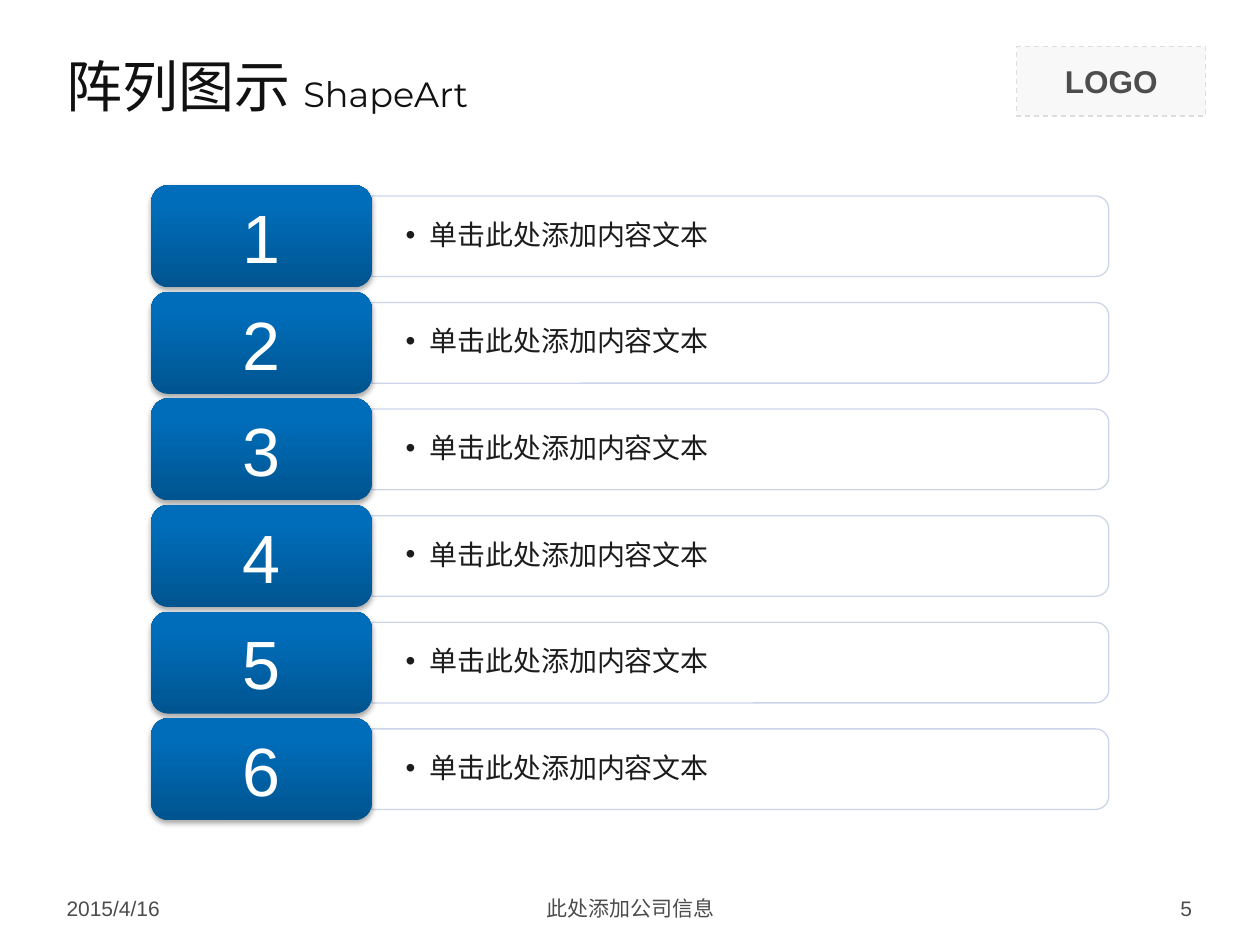
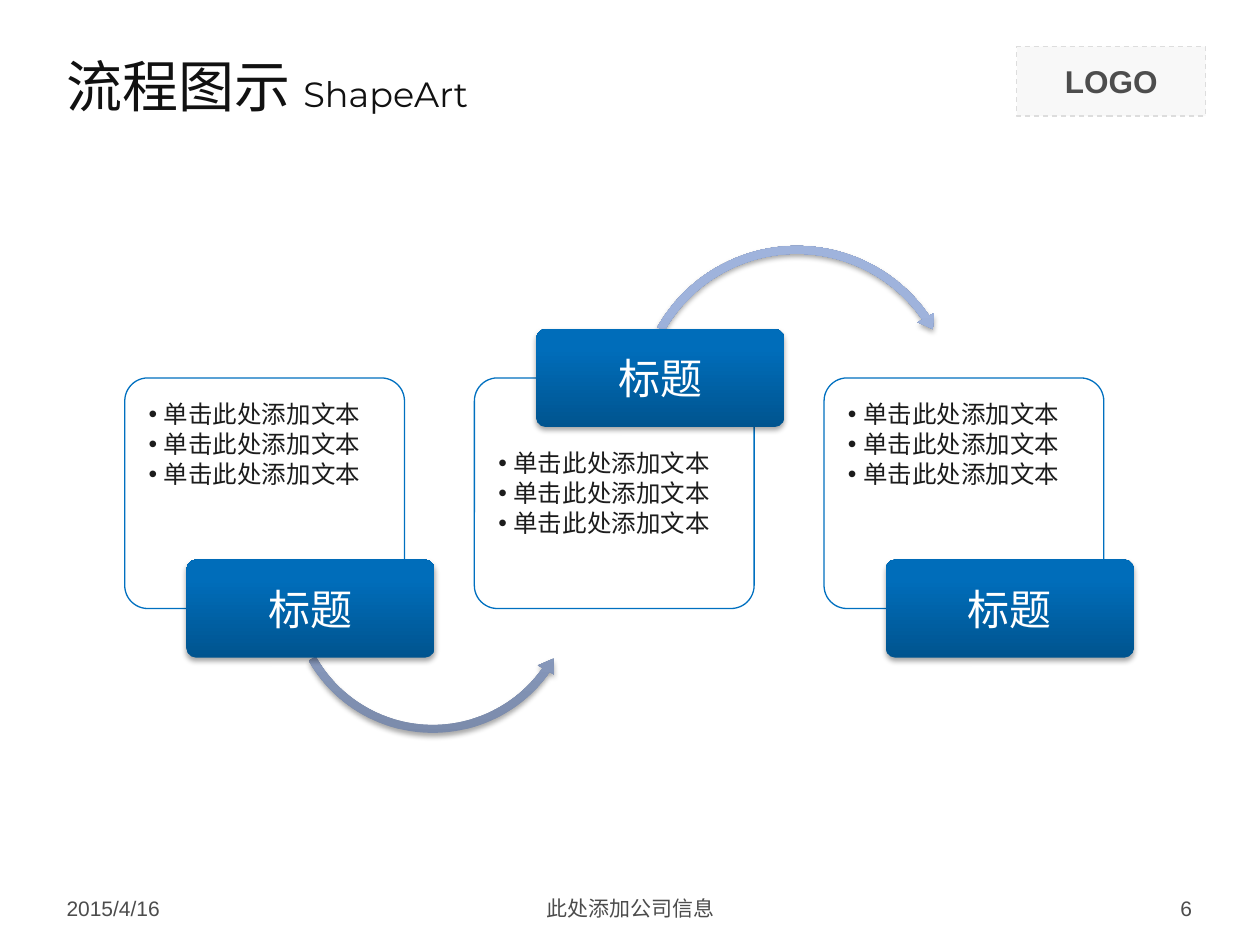
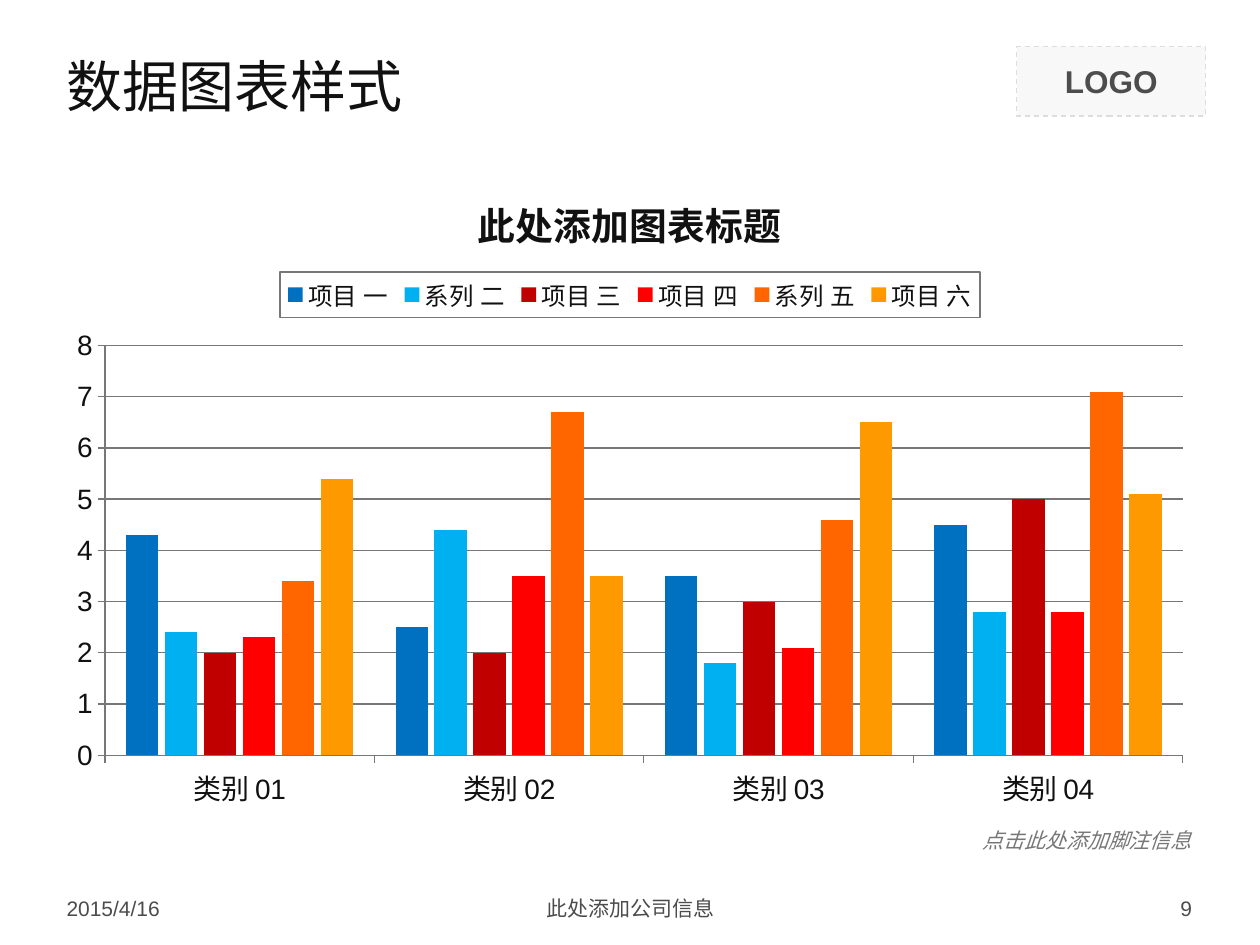
from lxml.etree import SubElement
from pptx import Presentation
from pptx.chart.data import CategoryChartData
from pptx.dml.color import RGBColor
from pptx.enum.chart import XL_CHART_TYPE, XL_LEGEND_POSITION, XL_TICK_MARK
from pptx.enum.dml import MSO_LINE
from pptx.enum.shapes import MSO_SHAPE
from pptx.enum.text import MSO_ANCHOR, MSO_AUTO_SIZE, PP_ALIGN
from pptx.oxml import parse_xml
from pptx.oxml.ns import nsdecls, qn
from pptx.util import Inches, Pt

BODY_FONT, TITLE_FONT = "Arial", "Montserrat"
INK, BODY_INK, FOOTER_INK, GREY = "111111", "1C1C1C", "4C4C4C", "777777"
WHITE, BLUE, PALE_LINE = "FFFFFF", "0070C0", "CCD5E8"
BLUE_GRADIENT = ("00548F", "006DBA")
ARROW_GRADIENT = ("7A8AAA", "9FB3DC")
MARGIN, CONTENT_WIDTH = 0.43, 9.14


def color(value):
    return RGBColor.from_string(value)


def style_font(font, size, ink, name=BODY_FONT, bold=False, italic=False):
    font.size, font.name = Pt(size), name
    font.bold, font.italic = bold, italic
    font.color.rgb = color(ink)


def add_text(page, box, text, size, ink, align=PP_ALIGN.LEFT,
             anchor=MSO_ANCHOR.MIDDLE, **font_style):
    label = page.shapes.add_textbox(*map(Inches, box))
    write(label.text_frame, text, size, ink, align, anchor, **font_style)
    return label


def write(frame, text, size, ink, align=PP_ALIGN.CENTER,
          anchor=MSO_ANCHOR.MIDDLE, **font_style):
    frame.text = text
    frame.word_wrap = True
    frame.vertical_anchor = anchor
    for para in frame.paragraphs:
        para.alignment = align
        for span in para.runs:
            style_font(span.font, size, ink, **font_style)


def add_bullets(page, box, text, size, indent, inset, anchor):
    """Bulleted lines with a hanging indent; inset is (horizontal, vertical)."""
    label = add_text(page, box, text, size, BODY_INK, anchor=anchor)
    frame = label.text_frame
    frame.margin_left = frame.margin_right = Inches(inset[0])
    frame.margin_top = frame.margin_bottom = Inches(inset[1])
    for para in frame.paragraphs:
        para.level = 1
        para.line_spacing = 0.9
        para.space_after = Pt(size * 0.15)
        properties = para._p.get_or_add_pPr()
        properties.set("marL", str(Inches(indent)))
        properties.set("indent", str(-Inches(indent)))
        SubElement(properties, qn("a:buFont")).set("typeface", BODY_FONT)
        SubElement(properties, qn("a:buChar")).set("char", "•")


def add_panel(page, kind, box, fill, line):
    panel = page.shapes.add_shape(kind, *map(Inches, box))
    panel.shadow.inherit = False
    panel.fill.solid()
    panel.fill.fore_color.rgb = color(fill)
    panel.line.color.rgb = color(line)
    panel.line.width = Pt(0.75)
    return panel


def add_glossy(page, kind, box, gradient):
    """Shape without outline, with a vertical gradient and a soft shadow."""
    shape = page.shapes.add_shape(kind, *map(Inches, box))
    shape.fill.gradient()
    shape.fill.gradient_angle = 90
    for stop, position, shade in zip(shape.fill.gradient_stops, (0, 0.8), gradient):
        stop.position = position
        stop.color.rgb = color(shade)
    shape.line.fill.background()
    shape.shadow.inherit = False
    shape._element.spPr.find(qn("a:effectLst")).append(parse_xml(
        f'<a:outerShdw {nsdecls("a")} blurRad="40000" dist="23000" dir="5400000"'
        ' rotWithShape="0"><a:srgbClr val="000000"><a:alpha val="35000"/>'
        '</a:srgbClr></a:outerShdw>'))
    return shape


def add_curved_arrow(page, kind, box, thickness, head, head_angle, end, start):
    """Thickness and head are percentages of the box; the rest are degrees."""
    arrow = add_glossy(page, kind, box, ARROW_GRADIENT)
    angles = [degrees * 0.6 for degrees in (head_angle, end, start)]
    for index, value in enumerate([thickness / 100, *angles, head / 100]):
        arrow.adjustments[index] = value


def add_page(deck, title, number, subtitle=""):
    page = deck.slides.add_slide(deck.slide_layouts[6])
    logo = add_panel(page, MSO_SHAPE.RECTANGLE, (8.07, 0.37, 1.5, 0.55), "F8F8F8", "DDDDDD")
    logo.line.dash_style = MSO_LINE.DASH
    write(logo.text_frame, "LOGO", 18, "4D4D4D", bold=True)

    heading = add_text(page, (MARGIN, 0.28, CONTENT_WIDTH, 0.79), title, 32, INK,
                       name=TITLE_FONT)
    if subtitle:
        span = heading.text_frame.paragraphs[0].add_run()
        span.text = subtitle
        style_font(span.font, 20, INK, TITLE_FONT)

    for left, width, text, align in (
            (MARGIN, 2.33, "2015/4/16", PP_ALIGN.LEFT),
            (3.42, 3.17, "此处添加公司信息", PP_ALIGN.CENTER),
            (7.23, 2.33, str(number), PP_ALIGN.RIGHT)):
        add_text(page, (left, 7.06, width, 0.29), text, 12, FOOTER_INK, align)
    return page


def add_numbered_row(page, box, number, text):
    left, top, width, height = box
    key_width, bar_height = 1.75, 0.64
    bar_left, bar_width = left + key_width, width - key_width
    middle = top + height / 2
    # The bar is an upright shape turned by 90 degrees about its centre.
    bar = add_panel(page, MSO_SHAPE.ROUND_2_SAME_RECTANGLE,
                    (bar_left + (bar_width - bar_height) / 2, middle - bar_width / 2,
                     bar_height, bar_width), WHITE, PALE_LINE)
    bar.rotation = 90
    add_bullets(page, (bar_left, middle - 0.29, bar_width, 0.58), text, 16,
                0.19, (0.27, 0.14), MSO_ANCHOR.MIDDLE)
    key = add_glossy(page, MSO_SHAPE.ROUNDED_RECTANGLE, (left, top, key_width, height),
                     BLUE_GRADIENT)
    write(key.text_frame, str(number), 39, WHITE)


def add_step_card(page, box, title, text, label_on_top):
    left, top, width, height = box
    card = add_panel(page, MSO_SHAPE.ROUNDED_RECTANGLE, box, WHITE, BLUE)
    card.adjustments[0] = 0.1
    text_top = top + (0.44 if label_on_top else 0.05)
    add_bullets(page, (left + 0.05, text_top, width - 0.08, 1.35), text, 14,
                0.12, (0.14, 0.14), MSO_ANCHOR.TOP)
    label_height = 0.78
    label_top = (top if label_on_top else top + height) - label_height / 2
    label = add_glossy(page, MSO_SHAPE.ROUNDED_RECTANGLE,
                       (left + 0.49, label_top, 1.97, label_height), BLUE_GRADIENT)
    label.adjustments[0] = 0.1
    write(label.text_frame, title, 24, WHITE)


def build_list_page(deck):
    page = add_page(deck, "阵列图示 ", 5, "ShapeArt")
    first_top, last_top, count = 1.47, 5.7, 6
    pitch = (last_top - first_top) / (count - 1)
    for index in range(count):
        add_numbered_row(page, (1.2, first_top + index * pitch, 7.6, 0.81),
                         index + 1, "单击此处添加内容文本")


def build_process_page(deck):
    page = add_page(deck, "流程图示 ", 6, "ShapeArt")
    add_curved_arrow(page, MSO_SHAPE.LEFT_CIRCULAR_ARROW, (2.26, 3.51, 2.35, 2.35),
                     2.7, 3.2, 5.54, 35.14, 150.41)
    add_curved_arrow(page, MSO_SHAPE.CIRCULAR_ARROW, (5.01, 1.91, 2.63, 2.63),
                     2.4, 2.8, 4.91, 325.5, 209.59)
    lines = "\n".join(["单击此处添加文本"] * 3)
    for index in range(3):
        add_step_card(page, (0.99 + index * 2.775, 3, 2.22, 1.83), "标题", lines,
                      label_on_top=index == 1)


def style_axis(axis):
    axis.major_tick_mark = XL_TICK_MARK.OUTSIDE
    axis.minor_tick_mark = XL_TICK_MARK.NONE
    style_font(axis.tick_labels.font, 16, INK)
    style_line(axis.format.line)


def style_line(line):
    line.color.rgb = color(GREY)
    line.width = Pt(0.75)


def add_column_chart(page, box, title, categories, series):
    data = CategoryChartData()
    data.categories = categories
    for name, _, values in series:
        data.add_series(name, values)
    chart = page.shapes.add_chart(XL_CHART_TYPE.COLUMN_CLUSTERED,
                                  *map(Inches, box), data).chart
    style_font(chart.font, 18, INK)

    chart.has_title = True
    chart.chart_title.include_in_layout = False
    heading = chart.chart_title.text_frame
    heading.text = title
    style_font(heading.paragraphs[0].runs[0].font, 21.6, INK, bold=True)

    chart.has_legend = True
    legend = chart.legend
    legend.position = XL_LEGEND_POSITION.TOP
    legend.include_in_layout = False
    style_font(legend.font, 14, INK)
    legend._element.find(qn("c:txPr")).addprevious(parse_xml(
        f'<c:spPr {nsdecls("c", "a")}><a:ln w="9525"><a:solidFill>'
        f'<a:srgbClr val="{GREY}"/></a:solidFill></a:ln></c:spPr>'))

    style_axis(chart.category_axis)
    style_axis(chart.value_axis)
    chart.value_axis.minimum_scale = 0
    chart.value_axis.maximum_scale = 8
    chart.value_axis.major_unit = 1
    style_line(chart.value_axis.major_gridlines.format.line)

    plot = chart.plots[0]
    plot.gap_width, plot.overlap = 130, -20
    plot.vary_by_categories = False
    for bars, (_, shade, _) in zip(plot.series, series):
        bars.format.fill.solid()
        bars.format.fill.fore_color.rgb = color(shade)


def build_chart_page(deck):
    page = add_page(deck, "数据图表样式", 9)
    add_column_chart(
        page, (MARGIN, 1.31, CONTENT_WIDTH, 5.2), "此处添加图表标题",
        [f"类别 {number:02}" for number in range(1, 5)],
        [("项目 一", BLUE, (4.3, 2.5, 3.5, 4.5)),
         ("系列 二", "00B0F0", (2.4, 4.4, 1.8, 2.8)),
         ("项目 三", "C00000", (2, 2, 3, 5)),
         ("项目 四", "FF0000", (2.3, 3.5, 2.1, 2.8)),
         ("系列 五", "FF6600", (3.4, 6.7, 4.6, 7.1)),
         ("项目 六", "FF9900", (5.4, 3.5, 6.5, 5.1))])
    footnote = add_text(page, (7.68, 6.52, 1.88, 0.3), "点击此处添加脚注信息", 12, GREY,
                        PP_ALIGN.RIGHT, MSO_ANCHOR.TOP, italic=True)
    footnote.text_frame.word_wrap = False
    footnote.text_frame.auto_size = MSO_AUTO_SIZE.SHAPE_TO_FIT_TEXT


def main():
    deck = Presentation()
    deck.slide_width, deck.slide_height = Inches(10), Inches(7.5)
    build_list_page(deck)
    build_process_page(deck)
    build_chart_page(deck)
    deck.save("out.pptx")


if __name__ == "__main__":
    main()
